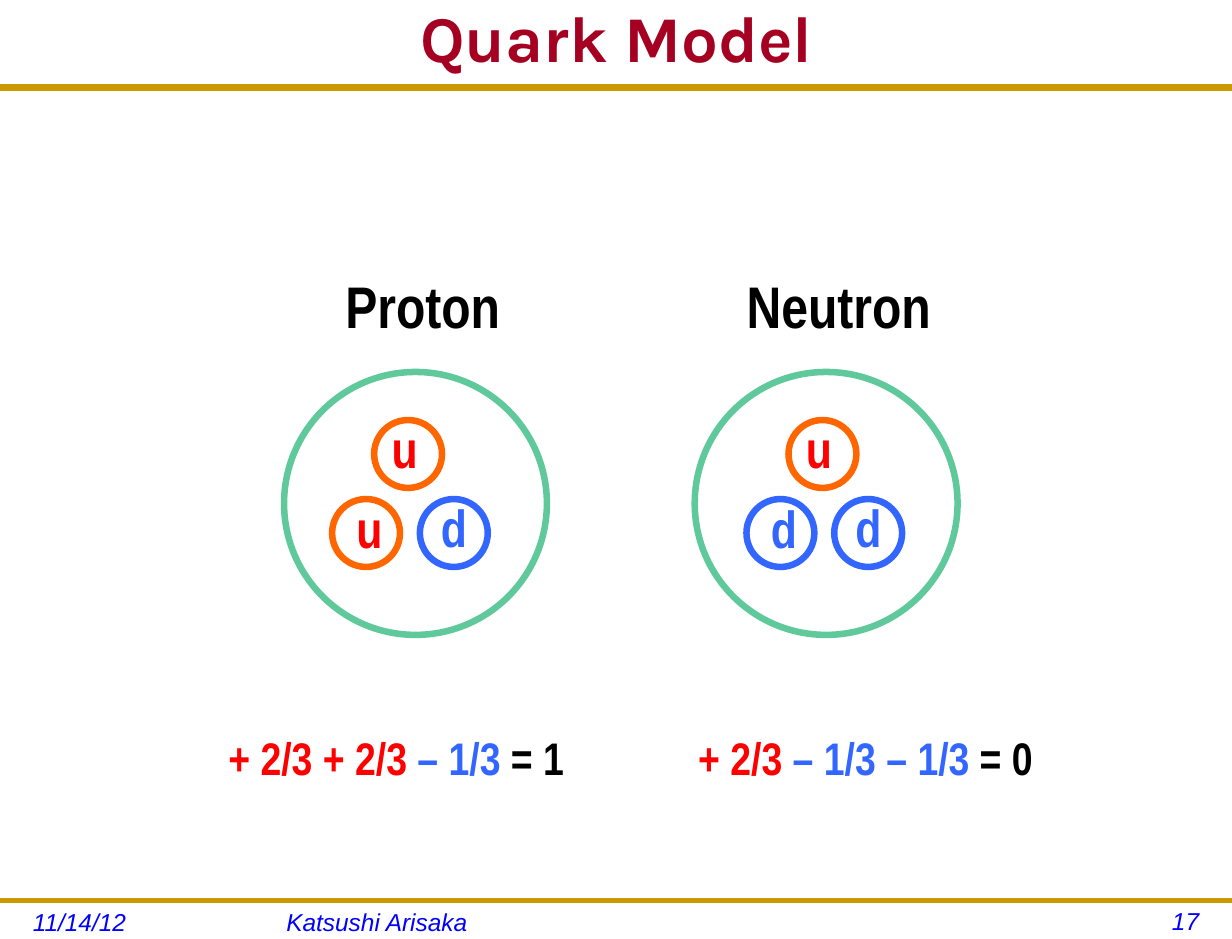
from lxml.etree import SubElement
from pptx import Presentation
from pptx.dml.color import RGBColor
from pptx.enum.shapes import MSO_CONNECTOR, MSO_SHAPE
from pptx.enum.text import MSO_ANCHOR, MSO_AUTO_SIZE, PP_ALIGN
from pptx.oxml.ns import qn
from pptx.util import Cm, Pt

WIDTH, HEIGHT = 26.67, 20.32
RED, BLUE, ORANGE, GREEN = "FF0000", "3366FF", "FF6600", "60C99C"
BLACK, GOLD = "000000", "CC9900"
TITLE = {"name": "Karla", "size": Pt(40), "bold": True}
FOOTER = {"name": "Arial", "size": Pt(15), "italic": True}
HEADING = {"name": "Arial Narrow", "size": Pt(36), "bold": True}
QUARK = {**HEADING, "size": Pt(32)}
CHARGE = {**HEADING, "size": Pt(28)}
FLAVOURS = {"u": (ORANGE, RED), "d": (BLUE, BLUE)}
QUARK_PLACES = [
    (8.1, 9.09, 0.05, -0.2),
    (7.19, 10.8, 0.2, -0.18),
    (9.09, 10.8, 0.13, -0.2),
]
QUARK_SHIFT = 8.97


def colour(value):
    """Turn a hex string into a colour."""
    return RGBColor.from_string(value)


def add_rule(page, top, weight):
    """Draw a gold line across the page."""
    rule = page.shapes.add_connector(
        MSO_CONNECTOR.STRAIGHT, Cm(0), Cm(top), Cm(WIDTH), Cm(top))
    rule.line.color.rgb = colour(GOLD)
    rule.line.width = Pt(weight)
    SubElement(rule._element.spPr, qn("a:effectLst"))


def add_text(page, place, spans, style, align=PP_ALIGN.CENTER, grow=True):
    """Add a one-paragraph box of coloured spans and return it."""
    box = page.shapes.add_textbox(*map(Cm, place))
    frame = box.text_frame
    frame.word_wrap = not grow
    frame.auto_size = MSO_AUTO_SIZE.SHAPE_TO_FIT_TEXT if grow else MSO_AUTO_SIZE.NONE
    if not grow:
        frame.margin_left = frame.margin_right = Cm(0.28)
    paragraph = frame.paragraphs[0]
    paragraph.alignment = align
    for text, shade in spans:
        span = paragraph.add_run()
        span.text = text
        for name, value in style.items():
            setattr(span.font, name, value)
        span.font.color.rgb = colour(shade)
    return box


def add_circle(page, left, top, size, shade):
    """Draw an unfilled circle."""
    circle = page.shapes.add_shape(
        MSO_SHAPE.OVAL, Cm(left), Cm(top), Cm(size), Cm(size))
    circle.shadow.inherit = False
    circle.fill.background()
    circle.line.color.rgb = colour(shade)
    circle.line.width = Pt(4)


def add_quarks(page, flavours, shift):
    """Place three labelled quarks in a triangle."""
    for flavour, (left, top, right, down) in zip(flavours, QUARK_PLACES):
        outline, shade = FLAVOURS[flavour]
        left += shift
        add_circle(page, left, top, 1.47, outline)
        add_text(page, (left + right, top + down, 1.22, 1.63),
                 [(flavour, shade)], QUARK)


def add_nucleon(page, name, name_place, left, flavours, shift, charge_left, charges):
    """Draw a nucleon with its name, quarks and charge sum."""
    add_circle(page, left, 8.05, 5.69, GREEN)
    add_quarks(page, flavours, shift)
    name_left, name_width = name_place
    add_text(page, (name_left, 5.72, name_width, 1.8), [(name, BLACK)], HEADING)
    add_text(page, (charge_left, 15.67, 7.85, 1.45), charges, CHARGE)


def add_frame(page):
    """Add the title, the two rules and the footer."""
    add_rule(page, 1.9, 4.5)
    add_rule(page, 19.48, 3)
    title = add_text(page, (0.43, 0, 25.83, 1.9), [("Quark Model", "A50021")],
                     TITLE, grow=False)
    title.text_frame.vertical_anchor = MSO_ANCHOR.MIDDLE
    title.text_frame.paragraphs[0].line_spacing = 0.8
    for text, left, top, width, align in [
        ("11/14/12", 0.43, 19.51, 5.28, PP_ALIGN.LEFT),
        ("Katsushi Arisaka", 5.92, 19.51, 15.44, PP_ALIGN.LEFT),
        ("17", 21.59, 19.48, 4.65, PP_ALIGN.RIGHT),
    ]:
        add_text(page, (left, top, width, 0.82), [(text, "0000FF")],
                 FOOTER, align, grow=False)


def main():
    """Build the slide and save it."""
    deck = Presentation()
    deck.slide_width, deck.slide_height = Cm(WIDTH), Cm(HEIGHT)
    page = deck.slides.add_slide(deck.slide_layouts[6])
    add_frame(page)
    add_nucleon(page, "Proton", (6.83, 4.65), 6.15, "uud", 0, 4.65,
                [("+ 2/3 + 2/3 ", RED), ("– 1/3 ", BLUE), ("= 1", BLACK)])
    add_nucleon(page, "Neutron", (15.44, 5.44), 15.04, "udd", QUARK_SHIFT, 14.81,
                [("+ 2/3 ", RED), ("– 1/3 – 1/3 ", BLUE), ("= 0", BLACK)])
    deck.save("out.pptx")


if __name__ == "__main__":
    main()
